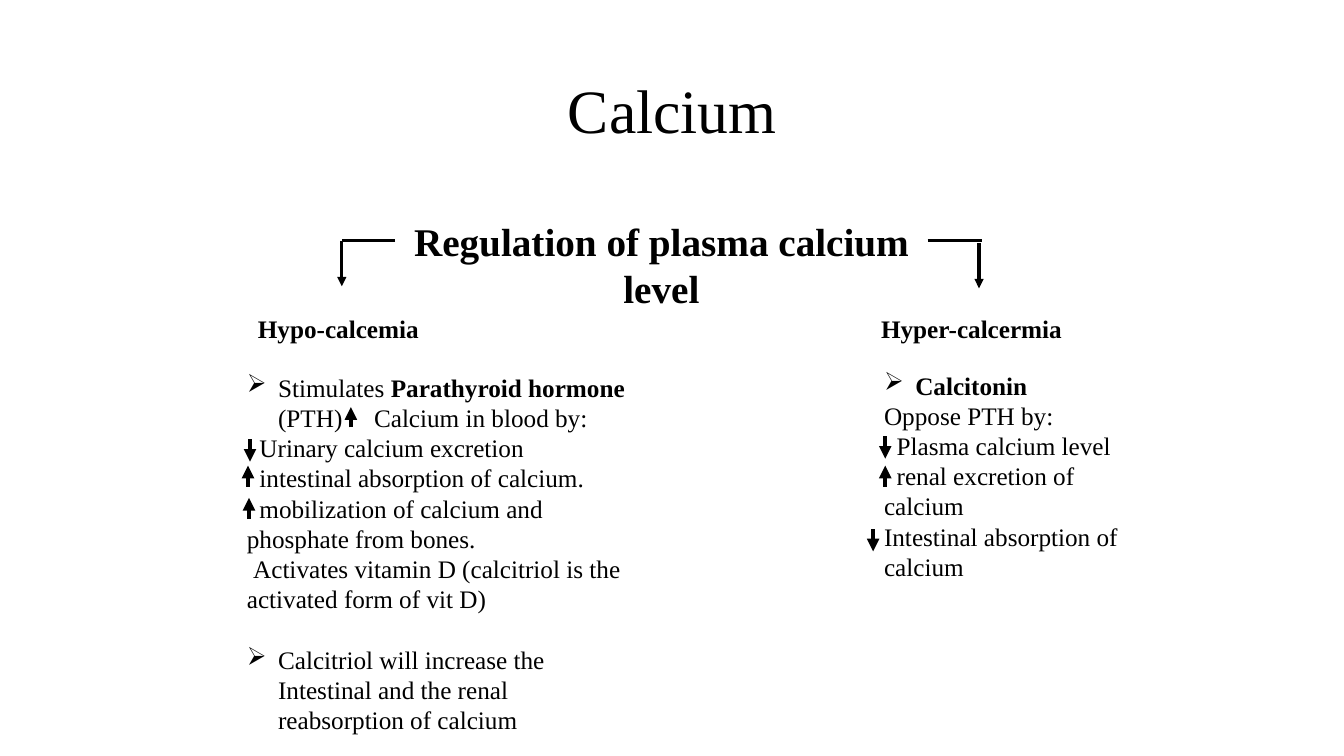
from dataclasses import dataclass

from lxml.etree import SubElement
from pptx import Presentation
from pptx.dml.color import RGBColor
from pptx.enum.shapes import MSO_CONNECTOR as Connector
from pptx.enum.text import MSO_ANCHOR as Anchor, MSO_AUTO_SIZE as AutoSize, PP_ALIGN as Align
from pptx.oxml.ns import qn
from pptx.slide import Slide
from pptx.text.text import TextFrame
from pptx.util import Inches, Pt


@dataclass(frozen=True)
class Theme:
    font: str = "Times New Roman"
    ink: RGBColor = RGBColor(0, 0, 0)
    paper: RGBColor = RGBColor(255, 255, 255)
    title: float = 44
    heading: float = 28
    body: float = 18
    bracket: float = 2.25
    marker: float = 3
    bullet: str = "➢"
    hanging: float = 0.31


@dataclass(frozen=True)
class Span:
    text: str
    bold: bool = False
    tracking: float = 0


@dataclass(frozen=True)
class Row:
    spans: tuple[Span, ...]
    bullet: bool = False
    first_indent: float = 0
    before: float = 0


@dataclass(frozen=True)
class Label:
    text: str
    left: float
    top: float
    width: float
    height: float
    size: float
    bold: bool = True
    align: Align = Align.LEFT
    anchor: Anchor = Anchor.TOP
    spacing: float = 1


@dataclass(frozen=True)
class Column:
    left: float
    top: float
    width: float
    height: float
    rows: tuple[Row, ...]


@dataclass(frozen=True)
class Marker:
    x: float
    start: float
    end: float


THEME = Theme()
MARK_INDENT = 0.125

LABELS = (
    Label("Calcium", 0.92, 0.4, 11.5, 1.45, THEME.title, bold=False,
          align=Align.CENTER, anchor=Anchor.MIDDLE, spacing=0.9),
    Label("Regulation of plasma calcium level", 3.92, 2.11, 5.28, 1.04,
          THEME.heading, align=Align.CENTER),
    Label("Hypo-calcemia", 2.46, 3.06, 2.03, 0.4, THEME.body),
    Label("Hyper-calcermia", 8.64, 3.06, 2.2, 0.4, THEME.body),
)

COLUMNS = (
    Column(2.35, 3.64, 4.01, 4.04, (
        Row((Span("Stimulates "), Span("Parathyroid hormone ", bold=True), Span("(PTH)"),
             Span(" ", tracking=18), Span("Calcium in blood by:")), bullet=True),
        Row((Span("Urinary calcium excretion"),), first_indent=MARK_INDENT),
        Row((Span("intestinal absorption of calcium."),), first_indent=MARK_INDENT),
        Row((Span("mobilization of calcium and"), Span("\n"), Span("phosphate from bones.")),
            first_indent=MARK_INDENT),
        Row((Span("Activates vitamin D (calcitriol is the activated form of vit D)"),),
            first_indent=MARK_INDENT / 2),
        Row((Span("Calcitriol will increase the Intestinal and the renal reabsorption of calcium"),),
            bullet=True, before=21.6),
    )),
    Column(8.67, 3.62, 2.64, 2.83, (
        Row((Span("Calcitonin", bold=True),), bullet=True),
        Row((Span("Oppose PTH by:"),)),
        Row((Span("Plasma calcium level"),), first_indent=MARK_INDENT),
        Row((Span("renal excretion of calcium"),), first_indent=MARK_INDENT),
        Row((Span("Intestinal absorption of calcium"),)),
    )),
)

MARKERS = (
    Marker(3.48, 4.24, 4.04),
    Marker(2.48, 4.36, 4.58),
    Marker(2.46, 4.83, 4.62),
    Marker(2.47, 5.15, 4.94),
    Marker(8.78, 4.33, 4.55),
    Marker(8.78, 4.83, 4.62),
    Marker(8.66, 5.25, 5.47),
)


def add_frame(page: Slide, area: Label | Column) -> TextFrame:
    """Add a wrapping text box over the area and return its frame."""
    box = page.shapes.add_textbox(
        Inches(area.left), Inches(area.top), Inches(area.width), Inches(area.height))
    box.text_frame.word_wrap = True
    return box.text_frame


def add_span(para, text: str, *, size: float, bold: bool = False, tracking: float = 0) -> None:
    """Append formatted text, or a line break, to a paragraph."""
    if text == "\n":
        para.add_line_break()
        return
    span = para.add_run()
    span.text = text
    span.font.name = THEME.font
    span.font.size = Pt(size)
    span.font.bold = bold
    span.font.color.rgb = THEME.ink
    if tracking:
        span.font._element.set("spc", str(round(tracking * 100)))


def add_label(page: Slide, label: Label) -> None:
    """Draw a one-paragraph label."""
    frame = add_frame(page, label)
    frame.vertical_anchor = label.anchor
    para = frame.paragraphs[0]
    para.alignment = label.align
    para.line_spacing = label.spacing
    add_span(para, label.text, size=label.size, bold=label.bold)


def add_column(page: Slide, column: Column) -> None:
    """Draw a column of bulleted and plain rows."""
    frame = add_frame(page, column)
    frame.auto_size = AutoSize.SHAPE_TO_FIT_TEXT
    for index, row in enumerate(column.rows):
        para = frame.add_paragraph() if index else frame.paragraphs[0]
        para.space_before = Pt(row.before)
        margin = THEME.hanging if row.bullet else 0
        indent = -THEME.hanging if row.bullet else row.first_indent
        props = para._p.get_or_add_pPr()
        props.set("marL", str(Inches(margin)))
        props.set("indent", str(Inches(indent)))
        if row.bullet:
            SubElement(props, qn("a:buChar")).set("char", THEME.bullet)
        for span in row.spans:
            add_span(para, span.text, size=THEME.body, bold=span.bold, tracking=span.tracking)


def add_line(page: Slide, start: tuple[float, float], end: tuple[float, float], *,
             width: float, arrow: bool = False) -> None:
    """Draw a straight line, with an arrowhead at its end if asked."""
    line = page.shapes.add_connector(
        Connector.STRAIGHT, *(Inches(value) for value in (*start, *end)))
    line.line.color.rgb = THEME.ink
    line.line.width = Pt(width)
    if arrow:
        SubElement(line.line._get_or_add_ln(), qn("a:tailEnd")).set("type", "triangle")
    SubElement(line._element.spPr, qn("a:effectLst"))


def main() -> None:
    """Build the calcium regulation slide."""
    deck = Presentation()
    deck.slide_width, deck.slide_height = Inches(13.33), Inches(7.5)
    page = deck.slides.add_slide(deck.slide_layouts[6])
    page.background.fill.solid()
    page.background.fill.fore_color.rgb = THEME.paper
    for label in LABELS:
        add_label(page, label)
    for inner, outer, drop, top in ((3.92, 3.39, 3.39, 2.39), (9.2, 9.74, 9.71, 2.41)):
        add_line(page, (inner, 2.39), (outer, 2.39), width=THEME.bracket)
        add_line(page, (drop, top), (drop, top + 0.45), width=THEME.bracket, arrow=True)
    for column in COLUMNS:
        add_column(page, column)
    for marker in MARKERS:
        add_line(page, (marker.x, marker.start), (marker.x, marker.end),
                 width=THEME.marker, arrow=True)
    deck.save("out.pptx")


if __name__ == "__main__":
    main()
